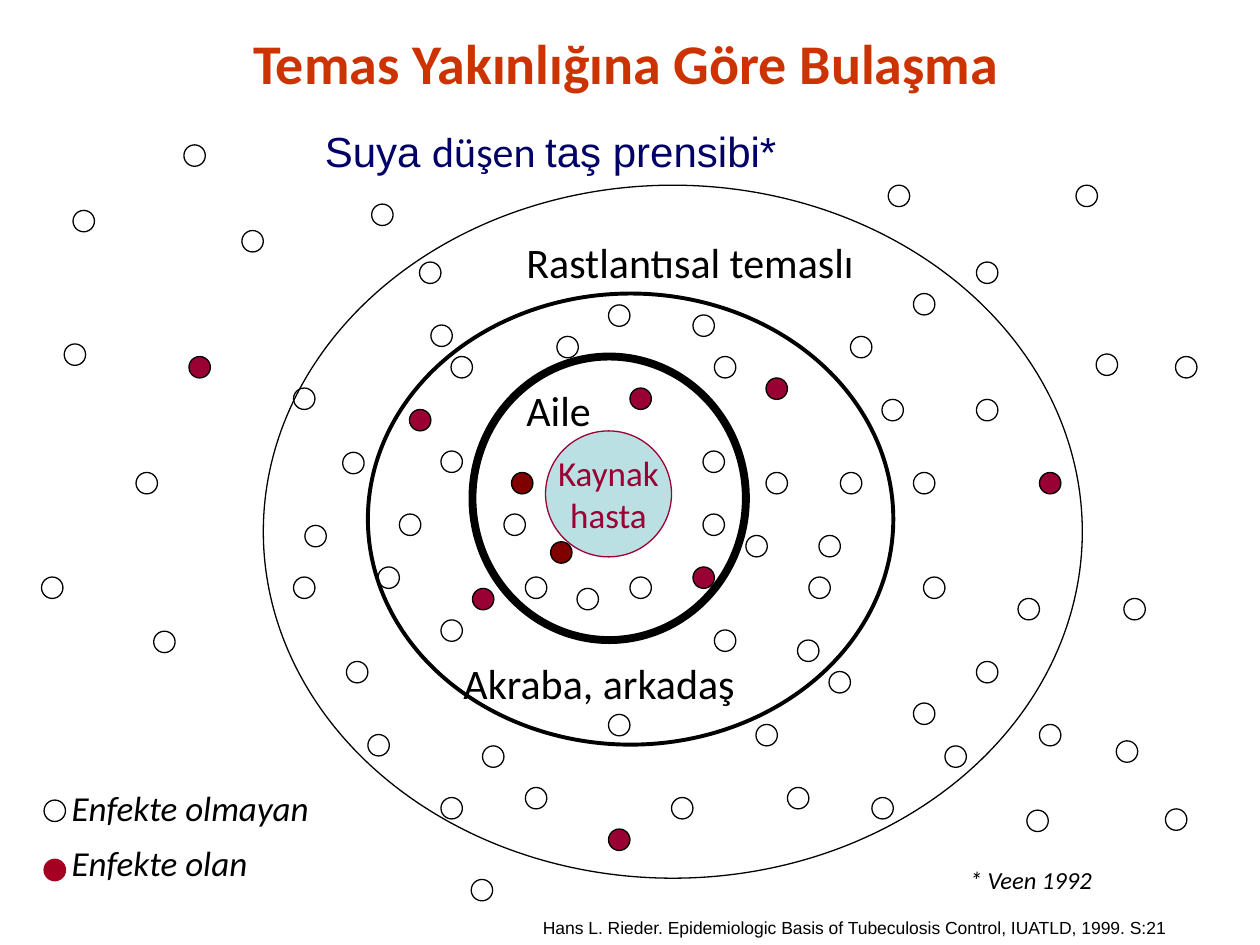
import collections

import pptx
import pptx.dml.color
import pptx.enum.shapes
import pptx.enum.text
import pptx.util

Inches = pptx.util.Inches
Box = collections.namedtuple("Box", "left top width height")
ALIGN = pptx.enum.text.PP_ALIGN
ANCHOR = pptx.enum.text.MSO_ANCHOR
BLACK, CRIMSON, MAROON, LEGEND_RED = "000000", "990033", "800000", "A50021"
DOT = 0.17

RINGS = [
    (Box(3.75, 2.83, 2.17, 2.25), 4.5),
    (Box(2.92, 2.33, 4.17, 3.58), 2.25),
    (Box(2.09, 1.47, 6.5, 5.5), 0.75),
]
RING_LABELS = [
    ("Aile", Box(4.08, 3, 0.84, 0.5)),
    ("Akraba, arkadaş", Box(3.58, 5.17, 2.75, 0.5)),
    ("Rastlantısal temaslı", Box(4.08, 1.83, 2.83, 0.5)),
]
UNINFECTED = {
    "family": [
        (4, 4.08), (4.17, 4.58), (5, 4.58), (5.58, 4.08), (5.58, 3.58), (4.58, 4.67),
    ],
    "relatives and friends": [
        (5.67, 5), (3.17, 4.08), (6.42, 4.58), (3.58, 2.83), (4.83, 2.42), (3.5, 4.92),
        (6.67, 3.75), (6.08, 3.75), (4.83, 5.67), (5.5, 2.5), (5.67, 2.83), (3.5, 3.58),
        (6.33, 5.08), (3, 4.5), (4.42, 2.67), (5.92, 4.25), (6.5, 4.25), (6.58, 5.33),
    ],
    "casual contacts": [
        (7.25, 5.58), (3.83, 5.92), (6.75, 2.67), (3.33, 2.08), (5.33, 6.33), (2.75, 5.25),
        (2.33, 3.08), (7.33, 4.58), (7.75, 3.17), (4.17, 6.25), (7.25, 3.75), (3.42, 2.58),
        (2.42, 4.17), (2.92, 5.83), (6.25, 6.25), (7.25, 2.33), (7.75, 5.25), (6.92, 6.33),
        (2.72, 3.59), (7, 3.17), (2.33, 4.58), (7.5, 5.92), (6, 5.75), (3.5, 6.33),
        (8.08, 4.75), (7.75, 2.08),
    ],
    "outside": [
        (1.92, 1.83), (1.08, 3.75), (0.58, 1.67), (9.25, 6.42), (8.92, 4.75), (1.22, 5.01),
        (2.95, 1.62), (8.15, 6.43), (8.54, 1.47), (9.33, 2.83), (7.05, 1.47), (3.74, 6.98),
        (0.33, 4.58), (8.25, 5.75), (1.46, 1.15), (8.7, 2.81), (0.51, 2.73), (8.86, 5.88),
    ],
}
INFECTED = {
    CRIMSON: [
        (5, 3.08), (5.5, 4.5), (6.08, 3), (3.25, 3.25), (3.75, 4.67),
        (8.25, 3.75), (4.83, 6.58), (1.5, 2.83),
    ],
    MAROON: [(4.06, 3.75), (4.37, 4.3)],
}


def color(value):
    """Turn a hex string into a colour."""
    return pptx.dml.color.RGBColor.from_string(value)


def inside(region, part):
    """Move a part given relative to a region onto the page."""
    return Box(region.left + part.left, region.top + part.top, part.width, part.height)


def style_span(span, size, value, font="Calibri", bold=False, italic=False):
    """Format one run of text."""
    span.font.name, span.font.size = font, pptx.util.Pt(size)
    span.font.bold, span.font.italic = bold, italic
    span.font.color.rgb = color(value)


def add_text(page, box, text, size, value=BLACK, wrap=True, **style):
    """Add a text box in one style and return its frame."""
    frame = page.shapes.add_textbox(*map(Inches, box)).text_frame
    frame.word_wrap = wrap
    frame.text = text
    for para in frame.paragraphs:
        for span in para.runs:
            style_span(span, size, value, **style)
    return frame


def add_ellipse(page, box, fill=None, line=BLACK, weight=0.75):
    """Add an outlined ellipse, filled when a colour is given."""
    oval = pptx.enum.shapes.MSO_SHAPE.OVAL
    ellipse = page.shapes.add_shape(oval, *map(Inches, box))
    ellipse.shadow.inherit = False
    if fill:
        ellipse.fill.solid()
        ellipse.fill.fore_color.rgb = color(fill)
    else:
        ellipse.fill.background()
    ellipse.line.color.rgb = color(line)
    ellipse.line.width = pptx.util.Pt(weight)
    return ellipse


def set_title(page, box):
    """Place and format the title placeholder."""
    title = page.shapes.title
    title.left, title.top, title.width, title.height = map(Inches, box)
    frame = title.text_frame
    frame.text = "Temas Yakınlığına Göre Bulaşma"
    frame.auto_size = pptx.enum.text.MSO_AUTO_SIZE.NONE
    frame.vertical_anchor = ANCHOR.TOP
    para = frame.paragraphs[0]
    para.alignment = ALIGN.CENTER
    para.space_before = pptx.util.Pt(0)
    style_span(para.runs[0], 32, "CC3300", bold=True)


def add_subtitle(page, box):
    """Add the subtitle with its two fonts."""
    frame = add_text(page, box, "", 24)
    frame.vertical_anchor = ANCHOR.MIDDLE
    parts = [("Suya ", "Arial"), ("düşen ", "Calibri"), ("taş prensibi*", "Arial")]
    for text, font in parts:
        span = frame.paragraphs[0].add_run()
        span.text = text
        style_span(span, 24, "000066", font)


def add_source_patient(page, box):
    """Add the central circle for the source patient."""
    frame = add_ellipse(page, box, "BBE0E3", CRIMSON).text_frame
    frame.word_wrap = False
    frame.vertical_anchor = ANCHOR.MIDDLE
    frame.text = "Kaynak\nhasta"
    for para in frame.paragraphs:
        para.alignment = ALIGN.CENTER
        style_span(para.runs[0], 20, CRIMSON)


def add_contact_map(page, box):
    """Add the source patient, the contact rings and the people."""
    add_source_patient(page, inside(box, Box(4.33, 3.42, 1, 1)))
    for ring, weight in RINGS:
        add_ellipse(page, inside(box, ring), weight=weight)
    for text, place in RING_LABELS:
        add_text(page, inside(box, place), text, 24)
    groups = [(None, spots) for spots in UNINFECTED.values()] + list(INFECTED.items())
    for fill, spots in groups:
        for left, top in spots:
            add_ellipse(page, inside(box, Box(left, top, DOT, DOT)), fill)


def add_legend(page, box):
    """Add the key to the two kinds of people."""
    add_ellipse(page, inside(box, Box(0, 0.08, DOT, DOT)))
    add_ellipse(page, inside(box, Box(0, 0.55, DOT, DOT)), LEGEND_RED, LEGEND_RED)
    place = inside(box, Box(0.16, 0, box.width - 0.16, box.height))
    frame = add_text(page, place, "Enfekte olmayan\nEnfekte olan", 20, italic=True)
    frame.margin_left = frame.margin_right = Inches(0.06)
    frame.margin_top = frame.margin_bottom = Inches(0.01)
    for para in frame.paragraphs:
        para.line_spacing = 0.9
    frame.paragraphs[1].space_before = pptx.util.Pt(10)


def add_references(page, box):
    """Add the footnote and the literature source."""
    note = Box(box.width - 1.77, 0, 1.5, 0.33)
    add_text(page, inside(box, note), "* Veen 1992", 14, italic=True)
    citation = "Hans L. Rieder. Epidemiologic Basis of Tubeculosis Control, IUATLD, 1999. S:21"
    place = inside(box, Box(0, 0.41, box.width, 0.27))
    add_text(page, place, citation, 10, wrap=False, font="Arial")


def main():
    """Build and save the deck."""
    deck = pptx.Presentation()
    deck.slide_width, deck.slide_height = Inches(10), Inches(7.5)
    page = deck.slides.add_slide(deck.slide_layouts.get_by_name("Title Only"))
    set_title(page, Box(0.68, 0.18, 8.58, 0.64))
    add_subtitle(page, Box(2.48, 1.07, 5.43, 0.26))
    add_contact_map(page, Box(0, 0, 10, 7.5))
    add_legend(page, Box(0.35, 6.27, 2.56, 0.79))
    add_references(page, Box(4.21, 6.82, 5.16, 0.68))
    deck.save("out.pptx")


if __name__ == "__main__":
    main()
